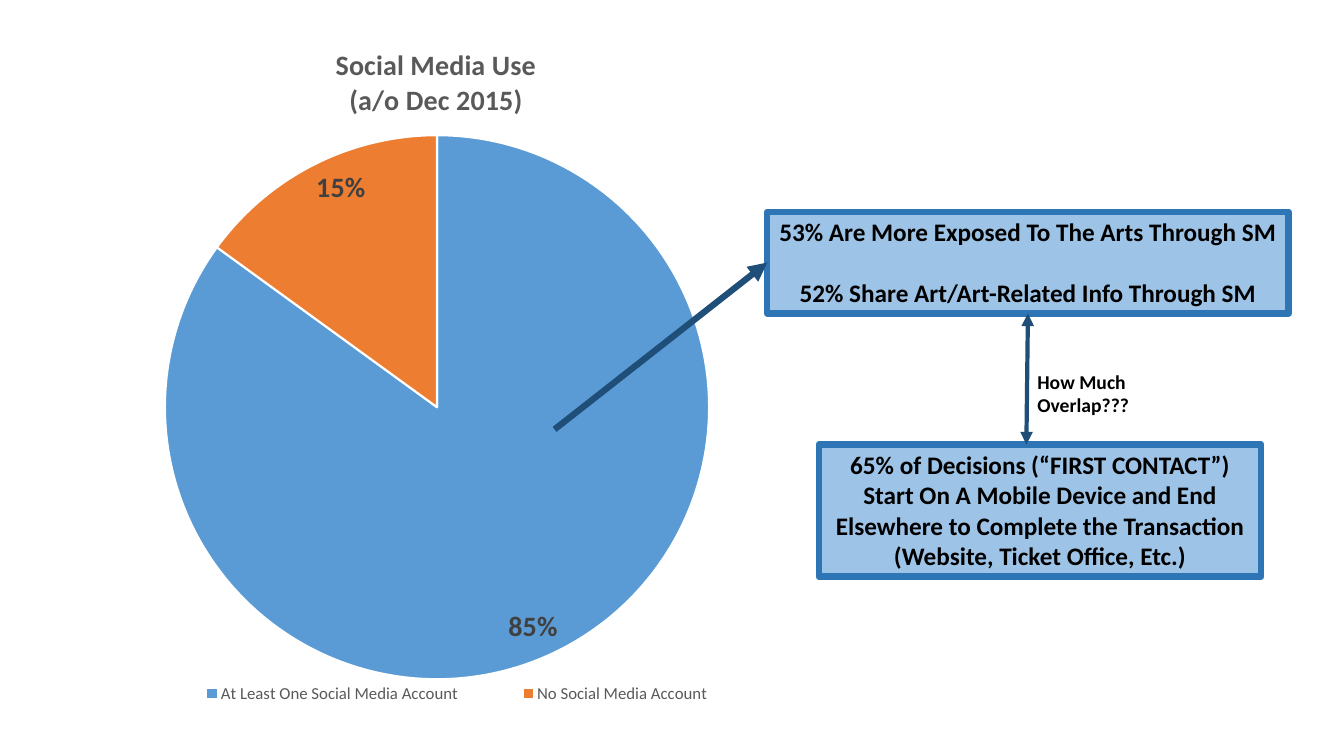
import dataclasses

import pptx
import pptx.chart.chart
import pptx.chart.data
import pptx.dml.color
import pptx.enum.chart
import pptx.enum.shapes
import pptx.enum.text
import pptx.oxml
import pptx.oxml.ns
import pptx.shapes.autoshape
import pptx.shapes.connector
import pptx.slide
import pptx.text.text
import pptx.util

EMU_PER_PX = 9144  # 100 px to the inch
FONT = "Calibri"
BLACK, WHITE, GREY, DARK_GREY = "000000", "FFFFFF", "595959", "404040"
BOX_FILL, BOX_LINE, ARROW_BLUE = "9DC3E6", "2E75B6", "1F4E79"
SLICES = {
    "At Least One Social Media Account": (0.85, "5B9BD5"),
    "No Social Media Account": (0.15, "ED7D31"),
}


@dataclasses.dataclass(frozen=True)
class Callout:
    left: int
    top: int
    width: int
    height: int
    lines: tuple[str, ...]
    wrap: bool


@dataclasses.dataclass(frozen=True)
class Arrow:
    start: tuple[int, int]
    end: tuple[int, int]
    weight: float
    heads: tuple[str, ...]


EXPOSURE = Callout(
    761, 210, 517, 101,
    ("53% Are More Exposed To The Arts Through SM",
     "52% Share Art/Art-Related Info Through SM"),
    wrap=False,
)
DECISIONS = Callout(
    812, 441, 439, 131,
    ("65% of Decisions (“FIRST CONTACT”) Start On A Mobile Device and End "
     "Elsewhere to Complete the Transaction (Website, Ticket Office, Etc.)",),
    wrap=True,
)
SLICE_ARROW = Arrow((550, 426), (761, 261), 4.5, ("tailEnd",))
OVERLAP_ARROW = Arrow((1019, 311), (1018, 441), 3, ("headEnd", "tailEnd"))


def px(length: int) -> pptx.util.Emu:
    return pptx.util.Emu(length * EMU_PER_PX)


def rgb(color: str) -> pptx.dml.color.RGBColor:
    return pptx.dml.color.RGBColor.from_string(color)


def format_font(font: pptx.text.text.Font, size: float, color: str, bold: bool) -> None:
    font.name = FONT
    font.size = pptx.util.Pt(size)
    font.bold = bold
    font.color.rgb = rgb(color)


def write(para, text: str, *, size: float, color: str = BLACK, bold: bool = True,
          align=None, space_before: float = 0) -> None:
    span = para.add_run()
    span.text = text
    format_font(span.font, size, color, bold)
    para.alignment = align
    para.space_before = pptx.util.Pt(space_before)


def set_layout(part, fractions: dict[str, float], after: str = "") -> None:
    """Place a chart part by fractions of the chart's size."""
    for old in part.xpath("c:layout"):
        part.remove(old)
    modes = "".join(f'<c:{axis}Mode val="edge"/>' for axis in "xy")
    values = "".join(f'<c:{key} val="{value}"/>' for key, value in fractions.items())
    target = '<c:layoutTarget val="inner"/>' if not after else ""
    layout = pptx.oxml.parse_xml(
        f'<c:layout {pptx.oxml.ns.nsdecls("c")}><c:manualLayout>'
        f"{target}{modes}{values}</c:manualLayout></c:layout>"
    )
    if after:
        part.xpath(after)[0].addnext(layout)
    else:
        part.insert(0, layout)


def style_pie(chart: pptx.chart.chart.Chart) -> None:
    format_font(chart.font, 10, BLACK, False)
    chart.has_title = True
    frame = chart.chart_title.text_frame
    write(frame.paragraphs[0], "Social Media Use", size=20, color=GREY)
    write(frame.add_paragraph(), "(a/o Dec 2015)", size=20, color=GREY)

    chart.has_legend = True
    chart.legend.position = pptx.enum.chart.XL_LEGEND_POSITION.BOTTOM
    chart.legend.include_in_layout = False
    format_font(chart.legend.font, 12, GREY, False)

    plot = chart.plots[0]
    plot.vary_by_categories = True
    for index, (_, color) in enumerate(SLICES.values()):
        piece = plot.series[0].points[index].format
        piece.fill.solid()
        piece.fill.fore_color.rgb = rgb(color)
        piece.line.color.rgb = rgb(WHITE)
        piece.line.width = pptx.util.Pt(1.5)
    labels = plot.series[0].data_labels
    labels.show_value = True
    labels.show_percentage = False
    labels.number_format = "0%"
    labels.number_format_is_linked = False
    labels.position = pptx.enum.chart.XL_LABEL_POSITION.INSIDE_END
    format_font(labels.font, 20, DARK_GREY, True)

    space = chart.element
    set_layout(space.xpath("c:chart/c:title")[0], {"x": 0.37, "y": 0.03}, "c:tx")
    set_layout(space.xpath(".//c:plotArea")[0],
               {"x": 0.16, "y": 0.16, "w": 0.68, "h": 0.77})
    set_layout(space.xpath(".//c:legend")[0],
               {"x": 0.14, "y": 0.93, "w": 0.77, "h": 0.04}, "c:legendPos")


def add_pie(page: pptx.slide.Slide) -> None:
    data = pptx.chart.data.CategoryChartData(number_format="0%")
    data.categories = list(SLICES)
    data.add_series("Series 1", [value for value, _ in SLICES.values()])
    frame = page.shapes.add_chart(
        pptx.enum.chart.XL_CHART_TYPE.PIE, px(35), px(22), px(797), px(701), data)
    style_pie(frame.chart)


def add_callout(page: pptx.slide.Slide, callout: Callout) -> pptx.shapes.autoshape.Shape:
    box = page.shapes.add_shape(
        pptx.enum.shapes.MSO_SHAPE.RECTANGLE, px(callout.left), px(callout.top),
        px(callout.width), px(callout.height))
    box.shadow.inherit = False
    box.fill.solid()
    box.fill.fore_color.rgb = rgb(BOX_FILL)
    box.line.color.rgb = rgb(BOX_LINE)
    box.line.width = pptx.util.Pt(4.5)
    frame = box.text_frame
    frame.word_wrap = callout.wrap
    frame.auto_size = pptx.enum.text.MSO_AUTO_SIZE.SHAPE_TO_FIT_TEXT
    frame.vertical_anchor = pptx.enum.text.MSO_ANCHOR.TOP
    for index, line in enumerate(callout.lines):
        para = frame.add_paragraph() if index else frame.paragraphs[0]
        write(para, line, size=18, align=pptx.enum.text.PP_ALIGN.CENTER,
              space_before=21.6 if index else 0)
    return box


def add_arrow(page: pptx.slide.Slide, arrow: Arrow) -> pptx.shapes.connector.Connector:
    line = page.shapes.add_connector(
        pptx.enum.shapes.MSO_CONNECTOR.STRAIGHT,
        *(px(value) for value in arrow.start + arrow.end))
    line.line.color.rgb = rgb(ARROW_BLUE)
    line.line.width = pptx.util.Pt(arrow.weight)
    namespace = pptx.oxml.ns.nsdecls("a")
    outline = line.line.fill and line.element.xpath("p:spPr/a:ln")[0]
    for head in arrow.heads:
        outline.append(pptx.oxml.parse_xml(f'<a:{head} {namespace} type="triangle"/>'))
    outline.addnext(pptx.oxml.parse_xml(f"<a:effectLst {namespace}/>"))
    return line


def add_overlap_note(page: pptx.slide.Slide) -> None:
    box = page.shapes.add_textbox(px(1019), px(362), px(201), px(34))
    box.text_frame.word_wrap = False
    write(box.text_frame.paragraphs[0], "How Much Overlap???", size=14)


def main() -> None:
    deck = pptx.Presentation()
    deck.slide_width, deck.slide_height = px(1333), px(750)
    page = deck.slides.add_slide(deck.slide_layouts[6])
    add_pie(page)
    exposure_box = add_callout(page, EXPOSURE)
    add_arrow(page, SLICE_ARROW).end_connect(exposure_box, 1)
    add_callout(page, DECISIONS)
    add_arrow(page, OVERLAP_ARROW).begin_connect(exposure_box, 2)
    add_overlap_note(page)
    deck.save("out.pptx")


if __name__ == "__main__":
    main()
